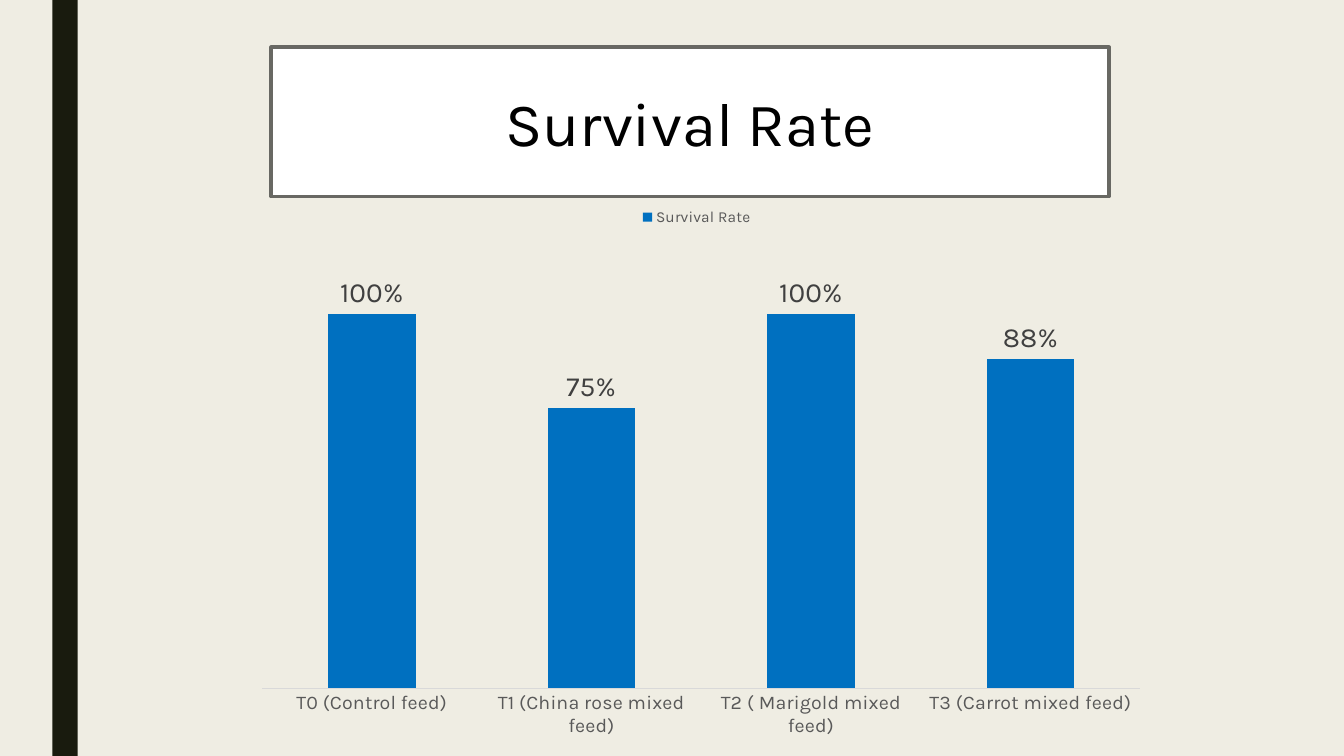
"""Builds the survival rate slide with a titled column chart."""
from pptx import Presentation
from pptx.chart.data import CategoryChartData
from pptx.dml.color import RGBColor
from pptx.enum import chart as ch, shapes, text
from pptx.oxml import parse_xml
from pptx.oxml.ns import nsdecls, qn
from pptx.util import Inches, Pt


def rgb(value):
    return RGBColor.from_string(value)


class Deck:
    font = "Karla"
    blue = "0070C0"
    grey = "595959"

    def __init__(self, prs):
        self.s = prs.slides.add_slide(prs.slide_layouts[6])
        fill = self.s.background.fill
        fill.solid()
        fill.fore_color.rgb = rgb("EFEDE3")

    def style(self, font, size, color):
        font.name = self.font
        font.size = Pt(size)
        font.color.rgb = rgb(color)

    def box(self, at, fill, line=None):
        sp = self.s.shapes.add_shape(shapes.MSO_SHAPE.RECTANGLE, *map(Inches, at))
        sp.shadow.inherit = False
        sp.fill.solid()
        sp.fill.fore_color.rgb = rgb(fill)
        if line:
            sp.line.color.rgb = rgb(line)
            sp.line.width = Pt(2.75)
        else:
            sp.line.fill.background()
        return sp

    def title(self, at, words):
        tf = self.box(at, "FFFFFF", "686863").text_frame
        tf.word_wrap = True
        tf.vertical_anchor = text.MSO_ANCHOR.MIDDLE
        tf.text = words
        p = tf.paragraphs[0]
        p.alignment = text.PP_ALIGN.CENTER
        self.style(p.runs[0].font, 44, "000000")

    def columns(self, at, name, rates, plot):
        data = CategoryChartData(number_format="0%")
        data.categories = list(rates)
        data.add_series(name, list(rates.values()))
        chart = self.s.shapes.add_chart(
            ch.XL_CHART_TYPE.COLUMN_CLUSTERED, *map(Inches, at), data).chart
        self.style(chart.font, 10, "000000")
        chart.has_title = False
        chart.has_legend = True
        chart.legend.position = ch.XL_LEGEND_POSITION.TOP
        chart.legend.include_in_layout = False
        self.style(chart.legend.font, 11, self.grey)
        self.axes(chart)
        self.bars(chart.plots[0])
        self.place(chart, plot)

    def axes(self, chart):
        cat, val = chart.category_axis, chart.value_axis
        cat.major_tick_mark = ch.XL_TICK_MARK.NONE
        cat.format.line.color.rgb = rgb("D9D9D9")
        cat.format.line.width = Pt(0.75)
        self.style(cat.tick_labels.font, 14, self.grey)
        val.minimum_scale, val.maximum_scale = 0, 1.2
        val.has_major_gridlines = False
        val.visible = False

    def bars(self, plot):
        plot.vary_by_categories = False
        plot.gap_width = 150
        plot.overlap = -25
        fill = plot.series[0].format.fill
        fill.solid()
        fill.fore_color.rgb = rgb(self.blue)
        labels = plot.series[0].data_labels
        labels.show_value = True
        labels.number_format = "0%"
        labels.number_format_is_linked = False
        labels.position = ch.XL_LABEL_POSITION.OUTSIDE_END
        self.style(labels.font, 20, "404040")

    def place(self, chart, plot):
        area = chart.element.find(".//" + qn("c:plotArea"))
        for old in area.findall(qn("c:layout")):
            area.remove(old)
        modes = '<c:layoutTarget val="inner"/><c:xMode val="edge"/><c:yMode val="edge"/>'
        sizes = "".join(f'<c:{k} val="{v}"/>' for k, v in zip("xywh", plot))
        area.insert(0, parse_xml(
            f'<c:layout {nsdecls("c")}><c:manualLayout>{modes}{sizes}'
            '</c:manualLayout></c:layout>'))


def main():
    prs = Presentation()
    prs.slide_width, prs.slide_height = Inches(13.33), Inches(7.5)
    deck = Deck(prs)
    deck.box((0.52, 0, 0.25, 7.5), "191B0E")
    deck.title((2.69, 0.47, 8.31, 1.48), "Survival Rate")
    rates = {
        "T0 (Control feed)": 1,
        "T1 (China rose mixed feed)": 0.75,
        "T2 ( Marigold mixed feed)": 1,
        "T3 (Carrot mixed feed)": 0.88,
    }
    deck.columns((2.42, 1.95, 8.98, 5.37), "Survival Rate", rates,
                 (0.02, 0.08, 0.97, 0.84))
    prs.save("out.pptx")


if __name__ == "__main__":
    main()
